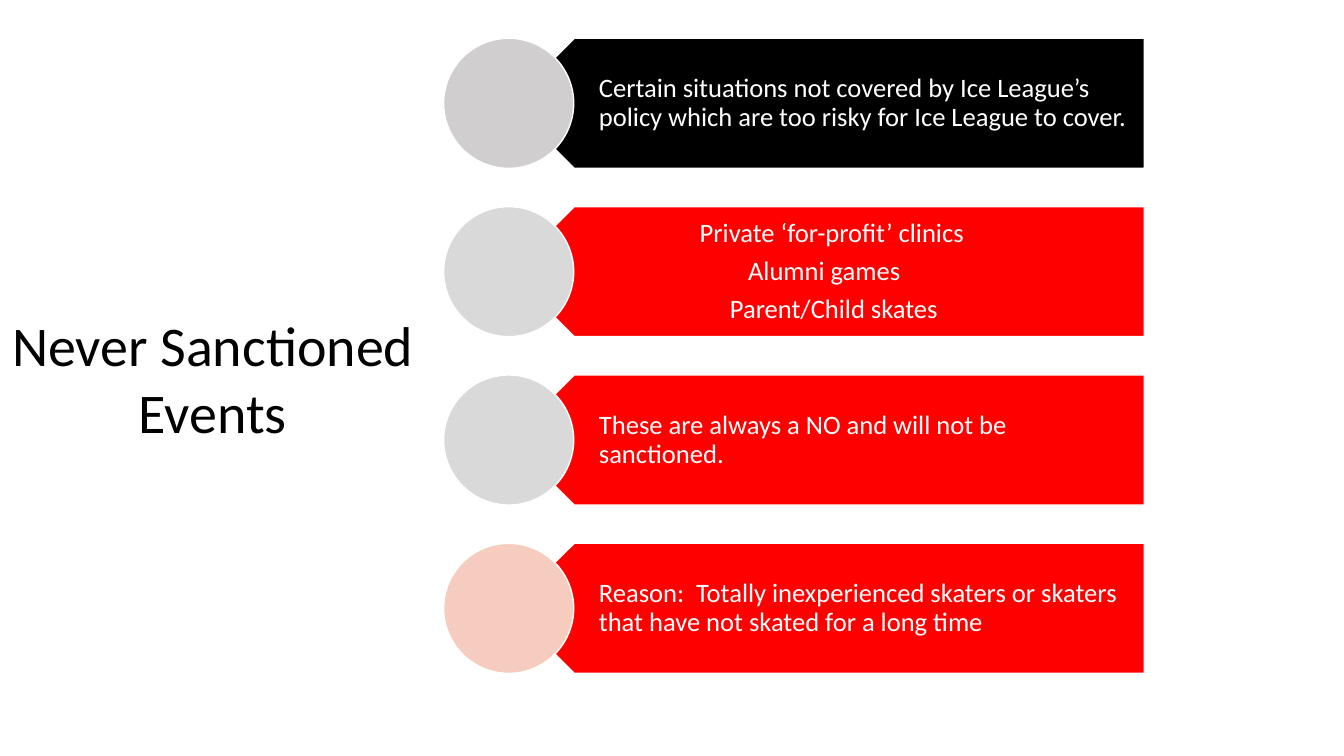
from pptx import Presentation
from pptx.dml.color import RGBColor
from pptx.enum.shapes import MSO_SHAPE
from pptx.enum.text import MSO_ANCHOR, PP_ALIGN
from pptx.util import Inches, Pt

BLACK = RGBColor(0x00, 0x00, 0x00)
WHITE = RGBColor(0xFF, 0xFF, 0xFF)
RED = RGBColor(0xFF, 0x00, 0x00)
WARM_GRAY = RGBColor(0xD0, 0xCE, 0xCE)
LIGHT_GRAY = RGBColor(0xD9, 0xD9, 0xD9)
PEACH = RGBColor(0xF6, 0xCC, 0xBE)

ROW_TOP = 0.38
ROW_STEP = 1.67
ROW_HEIGHT = 1.29

ROWS = [
    (BLACK, WARM_GRAY, [
        ("Certain situations not covered by Ice League’s policy "
         "which are too risky for Ice League to cover.", 0)]),
    (RED, LIGHT_GRAY, [
        ("Private ‘for-profit’ clinics", 1.0),
        ("Alumni games", 1.48),
        ("Parent/Child skates", 1.3)]),
    (RED, LIGHT_GRAY, [
        ("These are always a NO and will not be sanctioned.", 0)]),
    (RED, PEACH, [
        ("Reason:  Totally inexperienced skaters or skaters "
         "that have not skated for a long time", 0)]),
]


def add_shape(kind, left, top, width, fill, rotation=0):
    shape = page.shapes.add_shape(
        kind, Inches(left), Inches(top), Inches(width), Inches(ROW_HEIGHT))
    shape.shadow.inherit = False
    shape.rotation = rotation
    shape.fill.solid()
    shape.fill.fore_color.rgb = fill
    shape.line.color.rgb = WHITE
    shape.line.width = Pt(1)


def add_text(lines, left, top, width, height, size, color, wrap=True,
             align=PP_ALIGN.LEFT, anchor=MSO_ANCHOR.TOP,
             insets=(0.1, 0.05, 0.1, 0.05), line_spacing=1.0, space_after=0):
    box = page.shapes.add_textbox(
        Inches(left), Inches(top), Inches(width), Inches(height))
    frame = box.text_frame
    frame.word_wrap = wrap
    frame.vertical_anchor = anchor
    (frame.margin_left, frame.margin_top,
     frame.margin_right, frame.margin_bottom) = map(Inches, insets)
    for index, (text, indent) in enumerate(lines):
        para = frame.add_paragraph() if index else frame.paragraphs[0]
        para.alignment = align
        para.line_spacing = line_spacing
        para.space_after = Pt(space_after)
        if indent:
            para._p.get_or_add_pPr().set("marL", str(Inches(indent)))
        span = para.add_run()
        span.text = text
        span.font.name = "Calibri"
        span.font.size = Pt(size)
        span.font.color.rgb = color


deck = Presentation()
deck.slide_width = Inches(13.33)
deck.slide_height = Inches(7.5)
page = deck.slides.add_slide(deck.slide_layouts[6])

for number, (banner_color, circle_color, lines) in enumerate(ROWS):
    top = ROW_TOP + number * ROW_STEP
    add_shape(MSO_SHAPE.PENTAGON, 5.05, top, 6.3, banner_color, rotation=180)
    add_text(lines, 5.37, top, 5.98, ROW_HEIGHT, size=19, color=WHITE,
             anchor=MSO_ANCHOR.MIDDLE, insets=(0.57, 0.08, 0.15, 0.08),
             line_spacing=0.9, space_after=6.65)
    add_shape(MSO_SHAPE.OVAL, 4.4, top, ROW_HEIGHT, circle_color)

add_text([("Never Sanctioned", 0), ("Events", 0)], 0.02, 3.03, 4.18, 1.43,
         size=40, color=BLACK, wrap=False, align=PP_ALIGN.CENTER)

deck.save("out.pptx")
